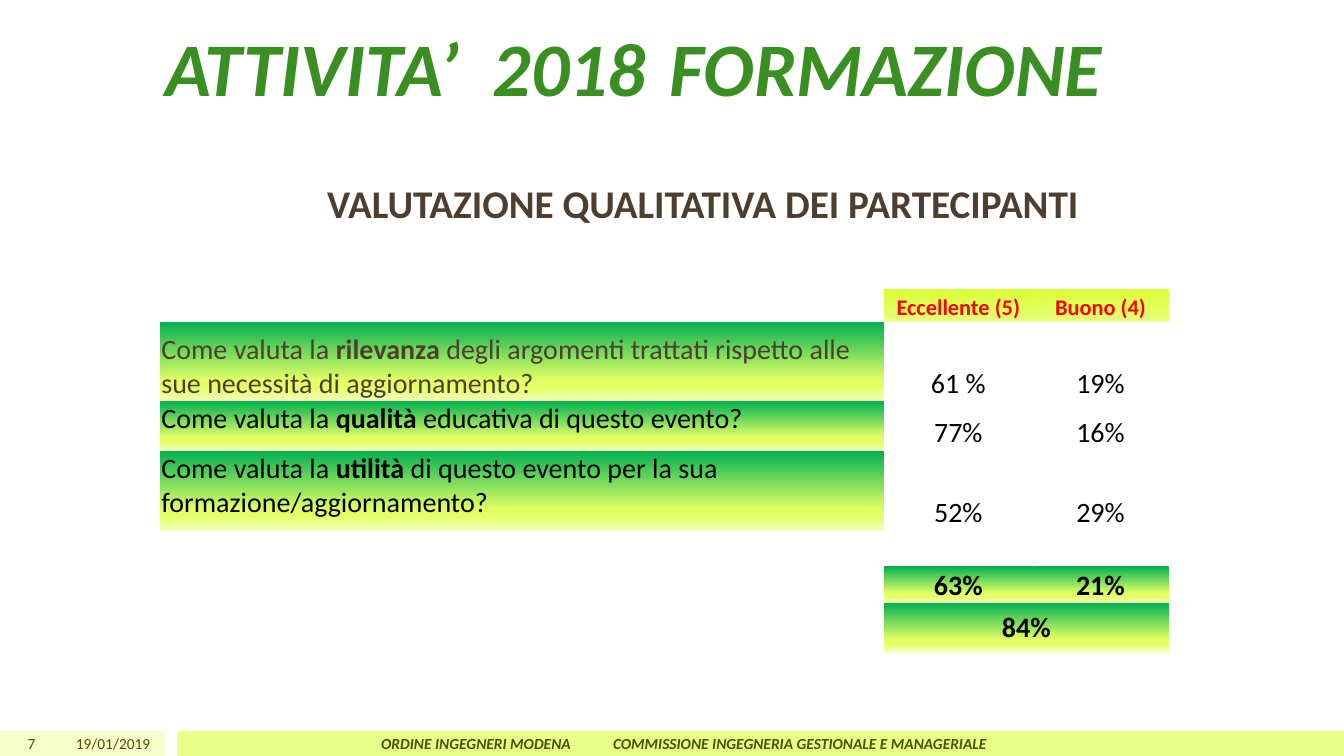
from dataclasses import dataclass

from lxml.etree import SubElement
from pptx import Presentation
from pptx.dml.color import RGBColor
from pptx.enum.shapes import MSO_SHAPE
from pptx.enum.text import MSO_ANCHOR, MSO_AUTO_SIZE, PP_ALIGN
from pptx.oxml.ns import qn
from pptx.util import Inches, Pt


@dataclass(frozen=True)
class Theme:
    font: str = "Calibri"
    title: str = "398F21"
    brown: str = "4D3E2F"
    black: str = "000000"
    red: str = "FF0000"
    footer_text: str = "455500"
    footer_pale: str = "F6FFCC"
    footer_lime: str = "E9FF88"
    header_fade: tuple = ((1, "DAFF33"), (74, "E3FF66"), (83, "E3FF66"), (100, "ECFF99"))
    green_fade: tuple = ((0, "00B050"), (74, "E3FF66"), (83, "E3FF66"), (100, "F3FFBB"))
    title_size: int = 54
    subtitle_size: int = 28
    body_size: int = 20
    header_size: int = 16
    footer_size: int = 11


THEME = Theme()
NO_STYLE = "{2D5ABB26-0587-4C30-8999-92F81FD0307C}"
COLUMN_WIDTHS = (7.18, 1.47, 1.35)
ROW_HEIGHTS = (0.32, 0.79, 0.49, 0.79, 0.36, 0.36, 0.49)
HEADINGS = ("Eccellente (5)", "Buono (4)")
# question before, in and after the bold word; colour; anchor; scores
QUESTIONS = (
    ("Come valuta la ", "rilevanza",
     " degli argomenti trattati rispetto alle sue necessità di aggiornamento?",
     THEME.brown, MSO_ANCHOR.BOTTOM, ("61 %", "19%")),
    ("Come valuta la ", "qualità", " educativa di questo evento?",
     THEME.black, MSO_ANCHOR.TOP, ("77%", "16%")),
    ("Come valuta la ", "utilità ",
     "di questo evento per la sua formazione/aggiornamento?",
     THEME.black, MSO_ANCHOR.TOP, ("52%", "29%")),
)
AVERAGES = ("63%", "21%")
TOTAL = "84%"


def add_run(paragraph, text, size, color, bold=False, italic=False):
    run = paragraph.add_run()
    run.text = text
    run.font.name = THEME.font
    run.font.size = Pt(size)
    run.font.bold = bold
    run.font.italic = italic
    run.font.color.rgb = RGBColor.from_string(color)


def add_text_box(slide, left, top, width, height, align, anchor=MSO_ANCHOR.MIDDLE):
    """Add an empty wrapping text box and return its text frame."""
    frame = slide.shapes.add_textbox(
        Inches(left), Inches(top), Inches(width), Inches(height)).text_frame
    frame.word_wrap = True
    frame.vertical_anchor = anchor
    frame.paragraphs[0].alignment = align
    return frame


def add_title(slide, left, top, width, height):
    title = slide.shapes.title
    title.left, title.top = Inches(left), Inches(top)
    title.width, title.height = Inches(width), Inches(height)
    frame = title.text_frame
    frame.word_wrap = True
    frame.auto_size = MSO_AUTO_SIZE.NONE
    frame.vertical_anchor = MSO_ANCHOR.BOTTOM
    frame.paragraphs[0].alignment = PP_ALIGN.LEFT
    add_run(frame.paragraphs[0], "ATTIVITA’  2018\tFORMAZIONE",
            THEME.title_size, THEME.title, bold=True, italic=True)


def add_subtitle(slide, left, top, width, height):
    frame = add_text_box(slide, left, top, width, height, PP_ALIGN.CENTER, MSO_ANCHOR.TOP)
    add_run(frame.paragraphs[0], "VALUTAZIONE QUALITATIVA DEI PARTECIPANTI",
            THEME.subtitle_size, THEME.brown, bold=True)


def fade_cell(cell, stops):
    """Fill a cell with a gradient that runs from top to bottom."""
    gradient = SubElement(cell._tc.get_or_add_tcPr(), qn("a:gradFill"), rotWithShape="1")
    stop_list = SubElement(gradient, qn("a:gsLst"))
    for percent, color in stops:
        stop = SubElement(stop_list, qn("a:gs"), pos=str(percent * 1000))
        SubElement(stop, qn("a:srgbClr"), val=color)
    SubElement(gradient, qn("a:lin"), ang="5400000", scaled="0")


def write_score(cell, text, size=THEME.body_size, color=THEME.black, bold=False,
                fade=None, anchor=MSO_ANCHOR.BOTTOM):
    cell.vertical_anchor = anchor
    paragraph = cell.text_frame.paragraphs[0]
    paragraph.alignment = PP_ALIGN.CENTER
    add_run(paragraph, text, size, color, bold)
    if fade:
        cell.fill.background()
        properties = cell._tc.tcPr
        properties.remove(properties.find(qn("a:noFill")))
        fade_cell(cell, fade)


def write_question(cell, before, keyword, after, color, anchor):
    cell.vertical_anchor = anchor
    properties = cell._tc.tcPr
    properties.remove(properties.find(qn("a:noFill")))
    fade_cell(cell, THEME.green_fade)
    for text, bold in ((before, False), (keyword, True), (after, False)):
        add_run(cell.text_frame.paragraphs[0], text, THEME.body_size, color, bold)


def add_ratings_table(slide, left, top, width, height):
    frame = slide.shapes.add_table(
        len(ROW_HEIGHTS), len(COLUMN_WIDTHS),
        Inches(left), Inches(top), Inches(width), Inches(height))
    table = frame.table
    table.first_row = table.horz_banding = False
    table._tbl.tblPr.find(qn("a:tableStyleId")).text = NO_STYLE
    for column, column_width in zip(table.columns, COLUMN_WIDTHS):
        column.width = Inches(column_width)
    for row, row_height in zip(table.rows, ROW_HEIGHTS):
        row.height = Inches(row_height)
    for cell in table.iter_cells():
        cell.margin_left = cell.margin_right = cell.margin_top = Inches(0.01)
        cell.margin_bottom = 0
        cell.fill.background()

    for column, heading in enumerate(HEADINGS, 1):
        write_score(table.cell(0, column), heading, THEME.header_size, THEME.red,
                    bold=True, fade=THEME.header_fade)
    for row, (*question, scores) in enumerate(QUESTIONS, 1):
        write_question(table.cell(row, 0), *question)
        for column, score in enumerate(scores, 1):
            write_score(table.cell(row, column), score)
    for column, average in enumerate(AVERAGES, 1):
        write_score(table.cell(5, column), average, bold=True, fade=THEME.green_fade)
    total_cell = table.cell(6, 1)
    total_cell.merge(table.cell(6, 2))
    write_score(total_cell, TOTAL, bold=True, fade=THEME.green_fade,
                anchor=MSO_ANCHOR.MIDDLE)


def add_footer(slide, left, top, width, height):
    pale_width, lime_offset = 1.64, 1.76
    for offset, bar_width, color in (
            (0, pale_width, THEME.footer_pale),
            (lime_offset, width - lime_offset, THEME.footer_lime)):
        bar = slide.shapes.add_shape(
            MSO_SHAPE.RECTANGLE, Inches(left + offset), Inches(top),
            Inches(bar_width), Inches(height))
        bar.shadow.inherit = False
        bar.fill.solid()
        bar.fill.fore_color.rgb = RGBColor.from_string(color)
        bar.line.fill.background()

    for text, offset, box_width in (("7", 0, 0.45), ("19/01/2019", 0.5, 1.09)):
        frame = add_text_box(slide, left + offset, top, box_width, height, PP_ALIGN.RIGHT)
        add_run(frame.paragraphs[0], text, THEME.footer_size, THEME.footer_text)

    frame = add_text_box(slide, left + 1.79, top, 10, height, PP_ALIGN.LEFT)
    frame.margin_left = Inches(1.99)
    paragraph = frame.paragraphs[0]
    tab_list = SubElement(paragraph._p.get_or_add_pPr(), qn("a:tabLst"))
    SubElement(tab_list, qn("a:tab"), pos=str(Inches(2.3)), algn="l")
    add_run(paragraph, "ORDINE INGEGNERI MODENA\tCOMMISSIONE INGEGNERIA GESTIONALE E MANAGERIALE",
            THEME.footer_size, THEME.footer_text, bold=True, italic=True)


def main():
    presentation = Presentation()
    presentation.slide_width, presentation.slide_height = Inches(13.33), Inches(7.5)
    slide = presentation.slides.add_slide(presentation.slide_layouts[5])
    add_footer(slide, 0, 7.25, 13.33, 0.25)
    add_title(slide, 1.54, 0.3, 10.85, 0.86)
    add_subtitle(slide, 2.43, 1.73, 9.08, 0.57)
    add_ratings_table(slide, 1.59, 2.87, 10, 3.59)
    presentation.save("out.pptx")


if __name__ == "__main__":
    main()
